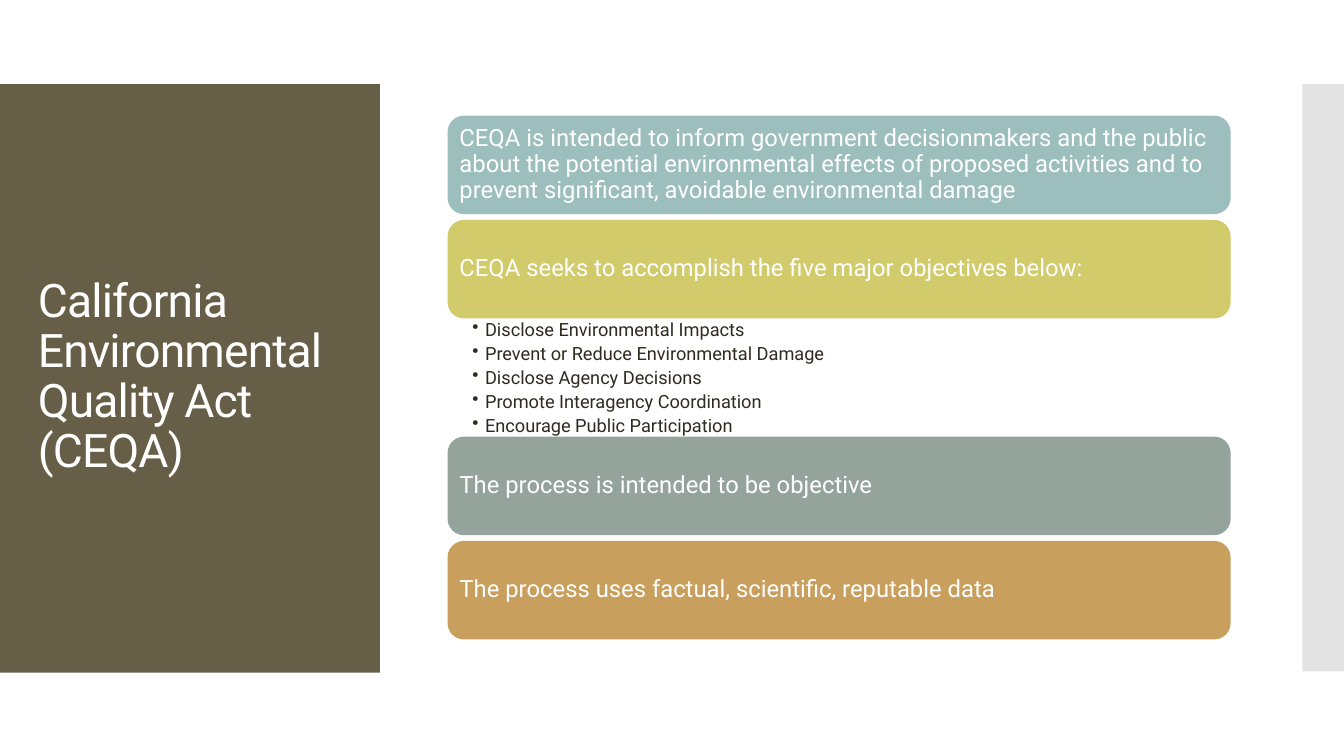
from lxml import etree
from pptx import Presentation
from pptx.dml.color import RGBColor
from pptx.enum import shapes, text
from pptx.oxml import ns
from pptx.util import Pt

WHITE = RGBColor(0xFF, 0xFF, 0xFF)
INK = RGBColor(0x2F, 0x2B, 0x20)
BROWN = RGBColor(0x67, 0x5E, 0x47)
GREY = RGBColor(0xE3, 0xE3, 0xE3)
TEAL = RGBColor(0x9C, 0xBE, 0xBD)
LIME = RGBColor(0xD2, 0xCB, 0x6C)
SAGE = RGBColor(0x95, 0xA3, 0x9D)
OCHRE = RGBColor(0xC8, 0x9F, 0x5D)

LEFT, WIDTH = 319.7, 559.4
BAR_H, GAP, LIST_H = 70.4, 4.1, 84.4
OBJECTIVES = [
    "Disclose Environmental Impacts",
    "Prevent or Reduce Environmental Damage",
    "Disclose Agency Decisions",
    "Promote Interagency Coordination",
    "Encourage Public Participation",
]
BARS = [
    (TEAL, "CEQA is intended to inform government decisionmakers and the public "
           "about the potential environmental effects of proposed activities and to "
           "prevent significant, avoidable environmental damage", GAP),
    (LIME, "CEQA seeks to accomplish the five major objectives below:", LIST_H),
    (SAGE, "The process is intended to be objective", GAP),
    (OCHRE, "The process uses factual, scientific, reputable data", 0),
]

prs = Presentation()
prs.slide_width, prs.slide_height = Pt(960), Pt(540)
s = prs.slides.add_slide(prs.slide_layouts[6])


def add_block(kind, color, left, top, width, height):
    sp = s.shapes.add_shape(kind, Pt(left), Pt(top), Pt(width), Pt(height))
    sp.shadow.inherit = False
    sp.fill.solid()
    sp.fill.fore_color.rgb = color
    sp.line.fill.background()
    return sp


def write(p, wording, size, color):
    p.alignment = text.PP_ALIGN.LEFT
    p.line_spacing = 0.9
    r = p.add_run()
    r.text = wording
    for name, value in {"name": "Roboto", "size": Pt(size)}.items():
        setattr(r.font, name, value)
    r.font.color.rgb = color
    return r


# Side panels and title
add_block(shapes.MSO_SHAPE.RECTANGLE, BROWN, 0, 60, 271.4, 420.4)
add_block(shapes.MSO_SHAPE.RECTANGLE, GREY, 930.4, 60, 29.6, 419.6)
title = s.shapes.add_textbox(Pt(20), Pt(88.6), Pt(232), Pt(362))
tf = title.text_frame
tf.word_wrap = True
tf.vertical_anchor = text.MSO_ANCHOR.MIDDLE
r = write(tf.paragraphs[0], "California Environmental Quality Act (CEQA)", 33, WHITE)
r.font._element.set("spc", "-60")

# Stacked bars, with room for the list under the second
top = 82.6
for color, wording, space_below in BARS:
    sp = add_block(shapes.MSO_SHAPE.ROUNDED_RECTANGLE, color, LEFT, top, WIDTH, BAR_H)
    tf = sp.text_frame
    tf.word_wrap = True
    tf.vertical_anchor = text.MSO_ANCHOR.MIDDLE
    for side in ("left", "top", "right", "bottom"):
        setattr(tf, f"margin_{side}", Pt(5.1))
    write(tf.paragraphs[0], wording, 17, WHITE)
    top += BAR_H + space_below

# Objectives list
list_top = 82.6 + 2 * BAR_H + GAP
box = s.shapes.add_textbox(Pt(LEFT), Pt(list_top), Pt(WIDTH), Pt(LIST_H))
tf = box.text_frame
tf.word_wrap = True
for side, inset in {"left": 17.8, "top": 1.7, "right": 9.2, "bottom": 1.7}.items():
    setattr(tf, f"margin_{side}", Pt(inset))
for i, objective in enumerate(OBJECTIVES):
    p = tf.add_paragraph() if i else tf.paragraphs[0]
    pPr = p._p.get_or_add_pPr()
    pPr.set("marL", str(Pt(9)))
    pPr.set("indent", str(Pt(-9)))
    etree.SubElement(pPr, ns.qn("a:buChar")).set("char", "•")
    p.space_after = Pt(3)
    write(p, objective, 13, INK)

prs.save("out.pptx")
